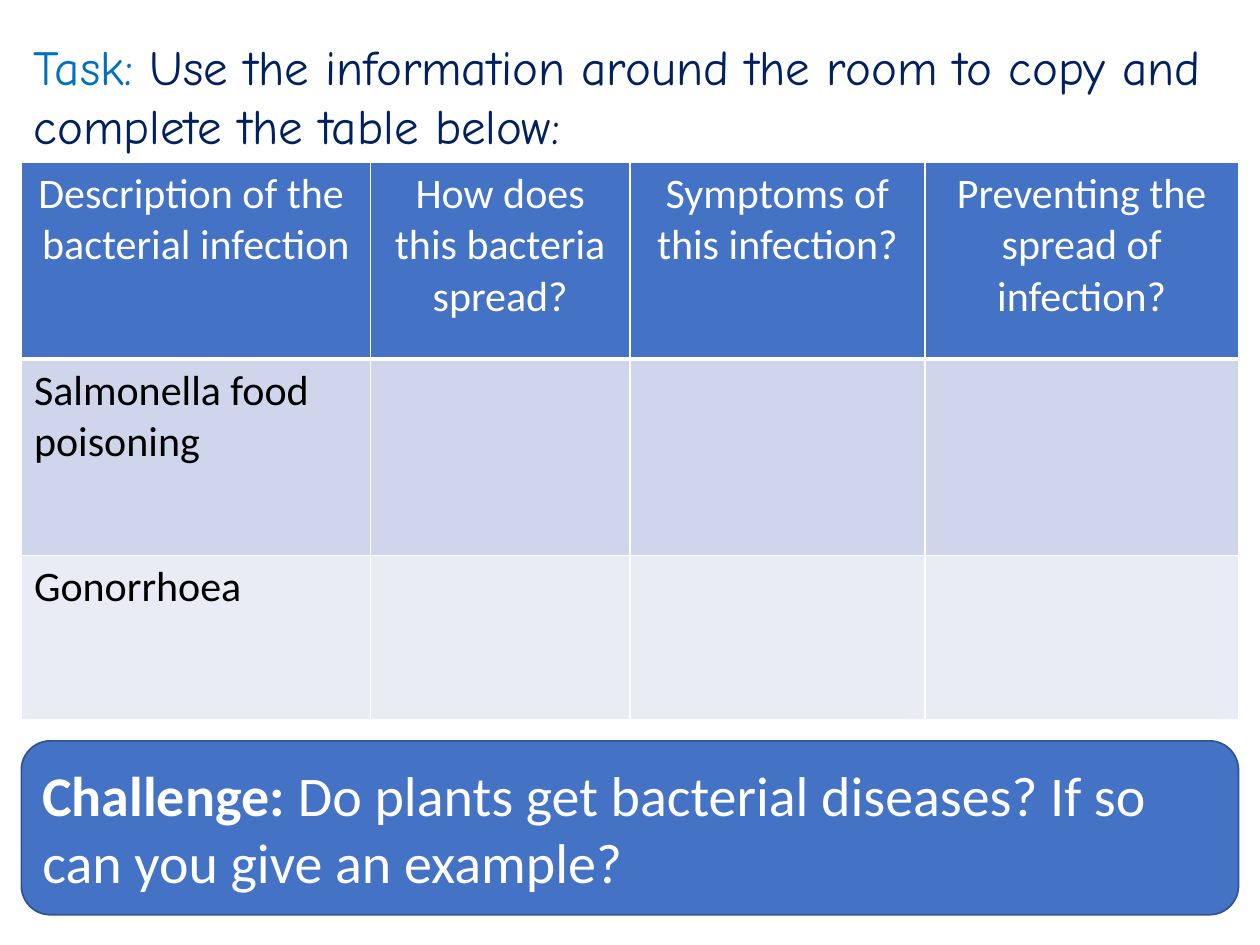
from dataclasses import dataclass

from lxml.etree import SubElement
from pptx import Presentation
from pptx.dml.color import RGBColor
from pptx.enum.shapes import MSO_SHAPE
from pptx.enum.text import MSO_ANCHOR, PP_ALIGN
from pptx.oxml.ns import qn
from pptx.util import Inches, Pt

WIDTH, HEIGHT = 10, 7.5
MARGIN = 0.017 * WIDTH
CONTENT_W = WIDTH - 2 * MARGIN
BLUE, WHITE, BLACK = "4472C4", "FFFFFF", "000000"
COLUMNS = (2.77, 2.06, 2.34, 2.49)


@dataclass
class Run:
    text: str
    size: float
    color: str
    name: str = "Calibri"
    bold: bool = False


@dataclass
class Row:
    height: float
    fill: str
    color: str
    align: PP_ALIGN
    texts: tuple
    bottom: float = 1


ROWS = (
    Row(1.56, BLUE, WHITE, PP_ALIGN.CENTER,
        ("Description of the \nbacterial infection",
         "How does this bacteria spread?",
         "Symptoms of this infection?",
         "Preventing the spread of infection?"), bottom=3),
    Row(1.56, "CFD5EA", BLACK, PP_ALIGN.LEFT, ("Salmonella food poisoning", "", "", "")),
    Row(1.3, "E9EBF5", BLACK, PP_ALIGN.LEFT, ("Gonorrhoea", "", "", "")),
)


def rgb(color: str) -> RGBColor:
    return RGBColor.from_string(color)


def place(top: float, height: float) -> tuple:
    """Full-width box inside the side margins."""
    return tuple(Inches(v) for v in (MARGIN, top, CONTENT_W, height))


def write(p, runs, align=PP_ALIGN.LEFT) -> None:
    p.alignment = align
    for run in runs:
        r = p.add_run()
        r.text = run.text
        formats = {"size": Pt(run.size), "name": run.name, "bold": run.bold}
        for key, value in formats.items():
            setattr(r.font, key, value)
        r.font.color.rgb = rgb(run.color)


def set_borders(cell, bottom: float) -> None:
    tc_pr = cell._tc.get_or_add_tcPr()
    for side, width in {"L": 1, "R": 1, "T": 1, "B": bottom}.items():
        ln = SubElement(tc_pr, qn(f"a:ln{side}"), w=str(Pt(width)))
        SubElement(SubElement(ln, qn("a:solidFill")), qn("a:srgbClr"), val=WHITE)


def add_task(slide, runs) -> None:
    tf = slide.shapes.add_textbox(*place(0.24, 1.04)).text_frame
    tf.word_wrap = True
    write(tf.paragraphs[0], runs)


def add_infection_table(slide) -> None:
    box = place(1.29, sum(row.height for row in ROWS))
    table = slide.shapes.add_table(len(ROWS), len(COLUMNS), *box).table
    for column, width in zip(table.columns, COLUMNS):
        column.width = Inches(width)
    for i, row in enumerate(ROWS):
        table.rows[i].height = Inches(row.height)
        for j, text in enumerate(row.texts):
            cell = table.cell(i, j)
            set_borders(cell, row.bottom)
            cell.fill.solid()
            cell.fill.fore_color.rgb = rgb(row.fill)
            tf = cell.text_frame
            for n, line in enumerate(text.splitlines()):
                p = tf.add_paragraph() if n else tf.paragraphs[0]
                write(p, [Run(line, 24, row.color)], row.align)


def add_challenge(slide, runs) -> None:
    sp = slide.shapes.add_shape(MSO_SHAPE.ROUNDED_RECTANGLE, *place(5.88, 1.38))
    sp.shadow.inherit = False
    sp.fill.solid()
    sp.fill.fore_color.rgb = rgb(BLUE)
    sp.line.color.rgb = rgb("325491")
    sp.line.width = Pt(1)
    tf = sp.text_frame
    tf.word_wrap = True
    tf.vertical_anchor = MSO_ANCHOR.MIDDLE
    write(tf.paragraphs[0], runs)


def main() -> None:
    prs = Presentation()
    prs.slide_width, prs.slide_height = Inches(WIDTH), Inches(HEIGHT)
    s = prs.slides.add_slide(prs.slide_layouts[6])

    # Table of infections
    add_infection_table(s)

    # Task heading
    add_task(s, [
        Run("Task: ", 28, "0070C0", "Comic Neue"),
        Run("Use the information around the room to copy and complete the table below:",
            28, "002060", "Comic Neue"),
    ])

    # Challenge question
    add_challenge(s, [
        Run("Challenge: ", 32, WHITE, bold=True),
        Run("Do plants get bacterial diseases? If so can you give an example?", 32, WHITE),
    ])
    prs.save("out.pptx")


if __name__ == "__main__":
    main()
